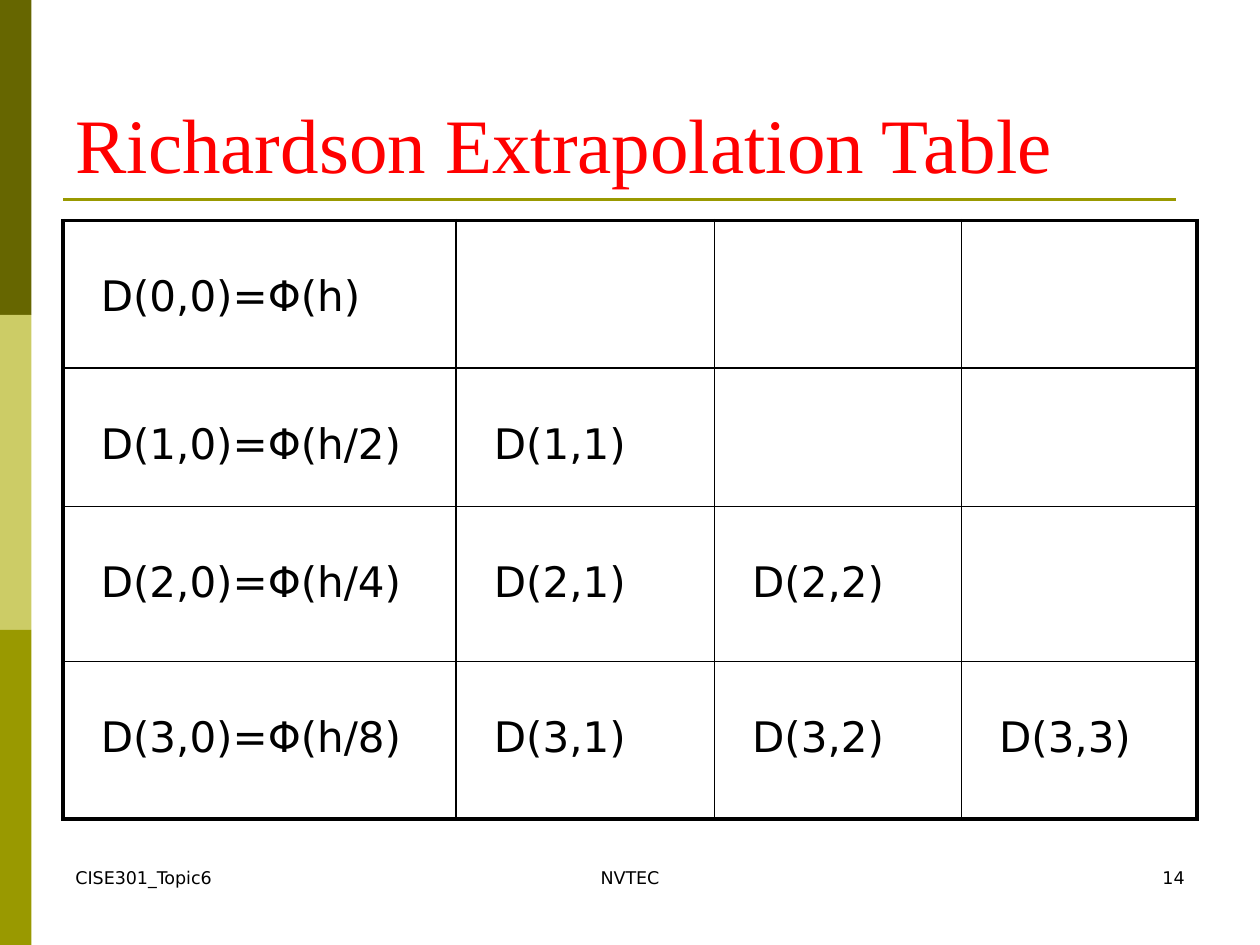
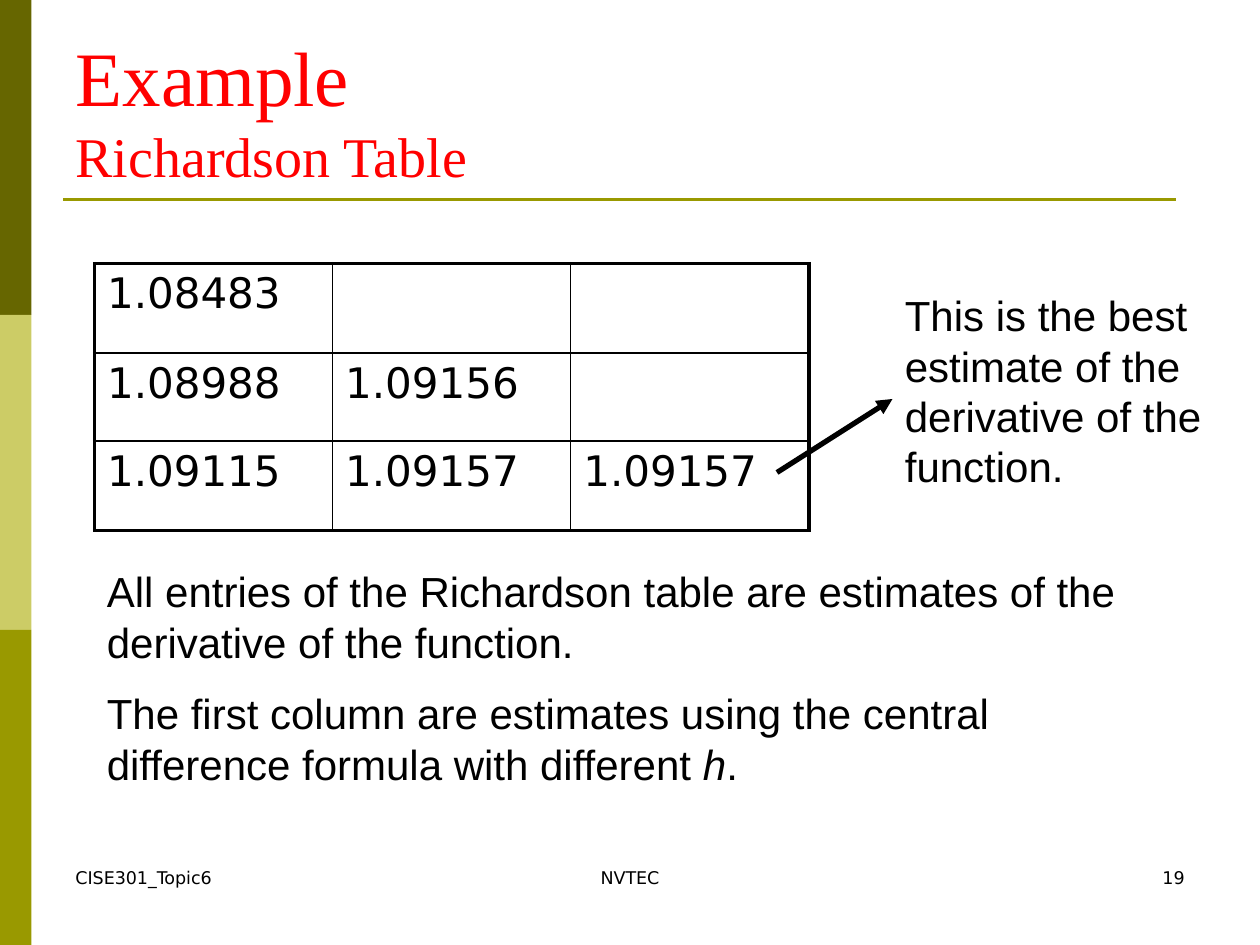
from dataclasses import dataclass

from lxml.etree import SubElement
from pptx import Presentation
from pptx.dml.color import RGBColor
from pptx.enum.shapes import MSO_CONNECTOR as Connector, MSO_SHAPE as Shape
from pptx.enum.text import MSO_ANCHOR as Anchor, MSO_AUTO_SIZE as AutoSize, PP_ALIGN as Align
from pptx.oxml.ns import qn
from pptx.util import Inches, Pt

COLUMNS, ROWS = 120, 90
UNIT = Inches(10) / COLUMNS


@dataclass(frozen=True)
class Theme:
    """Colours, fonts and point sizes shared by the slides."""
    ink: str = "000000"
    title: str = "FF0000"
    rule: str = "999900"
    bands: tuple = ("666600", "CCCC66", "999900")
    serif: str = "Times New Roman"
    sans: str = "DejaVu Sans"
    prose: str = "Arial"
    title_size: int = 44
    subtitle_size: int = 32
    body_size: int = 24
    footer_size: int = 10
    rule_width: float = 1.5
    arrow_width: float = 3
    frame_width: float = 2.25
    grid_width: float = 1


@dataclass(frozen=True)
class Box:
    """A region measured in grid columns and rows."""
    left: float
    top: float
    width: float
    height: float

    def region(self, left, top, width, height):
        """Return a region offset from this one."""
        return Box(self.left + left, self.top + top, width, height)

    def emu(self):
        """Return left, top, width and height as slide lengths."""
        return [round(n * UNIT) for n in (self.left, self.top, self.width, self.height)]


THEME = Theme()
PAGE = Box(0, 0, COLUMNS, ROWS)
BODY = Box(6, 21, 108, 57)
FOOTER = Box(6, 82, 108, 6)
PLAIN_CELL = {}
PADDED_CELL = {"margin_left": Inches(0.3), "margin_top": Inches(0.3),
               "margin_right": Inches(0.1), "margin_bottom": Inches(0.05)}


def assign(target, values):
    """Set every named attribute of the target."""
    for name, value in values.items():
        setattr(target, name, value)


def write(paragraph, text, face, size, color=THEME.ink, **style):
    """Append a formatted run to the paragraph."""
    run = paragraph.add_run()
    run.text = text
    assign(run.font, {"name": face, "size": Pt(size), **style})
    run.font.color.rgb = RGBColor.from_string(color)


def add_line(slide, start, end, color, width):
    """Draw a straight line between two grid points."""
    points = [round(n * UNIT) for n in (*start, *end)]
    line = slide.shapes.add_connector(Connector.STRAIGHT, *points)
    line.line.color.rgb = RGBColor.from_string(color)
    line.line.width = Pt(width)
    SubElement(line._element.spPr, qn("a:effectLst"))
    return line


def add_bands(slide, box):
    """Stack the colour bands down the left edge and draw the title rule."""
    height = box.height / len(THEME.bands)
    for index, color in enumerate(THEME.bands):
        place = box.region(0, index * height, 3, height)
        band = slide.shapes.add_shape(Shape.RECTANGLE, *place.emu())
        band.shadow.inherit = False
        band.fill.solid()
        band.fill.fore_color.rgb = RGBColor.from_string(color)
        band.line.fill.background()
    add_line(slide, (6, 19), (112, 19), THEME.rule, THEME.rule_width)


def add_prose(slide, box, paragraphs, face, size, align=Align.LEFT):
    """Place wrapped paragraphs, each a list of (text, style) pairs."""
    frame = slide.shapes.add_textbox(*box.emu()).text_frame
    frame.word_wrap = True
    for index, pieces in enumerate(paragraphs):
        paragraph = frame.add_paragraph() if index else frame.paragraphs[0]
        paragraph.alignment = align
        if index:
            paragraph.space_before = Pt(size / 2)
        for text, style in pieces:
            write(paragraph, text, face, size, **style)


def add_footer(slide, box, number):
    """Place the course, school and slide number along the bottom."""
    entries = (("CISE301_Topic6", 0, 28, Align.LEFT),
               ("NVTEC", 35, 38, Align.CENTER),
               (str(number), 80, 28, Align.RIGHT))
    for text, left, width, align in entries:
        add_prose(slide, box.region(left, 0, width, box.height), [[(text, {})]],
                  THEME.sans, THEME.footer_size, align)


def set_title(slide, box, heading, subtitle=None):
    """Move the title placeholder and fill in its one or two lines."""
    title = slide.shapes.title
    assign(title, dict(zip(("left", "top", "width", "height"), box.emu())))
    assign(title.text_frame, {"vertical_anchor": Anchor.BOTTOM, "word_wrap": True,
                              "auto_size": AutoSize.NONE})
    paragraph = title.text_frame.paragraphs[0]
    paragraph.alignment = Align.LEFT
    write(paragraph, heading, THEME.serif, THEME.title_size, THEME.title)
    if subtitle:
        paragraph.add_line_break()
        write(paragraph, subtitle, THEME.serif, THEME.subtitle_size, THEME.title)


def add_borders(cell, outer):
    """Draw heavy outer and thin inner edges around a cell."""
    properties = cell._tc.get_or_add_tcPr()
    for side in "LRTB":
        width = THEME.frame_width if outer[side] else THEME.grid_width
        edge = SubElement(properties, qn(f"a:ln{side}"), w=str(Pt(width)))
        fill = SubElement(edge, qn("a:solidFill"))
        SubElement(fill, qn("a:srgbClr"), val=THEME.ink)


def add_triangle(slide, box, entries, widths, heights, margins, spacing):
    """Build a square table whose entries fill its lower triangle."""
    count = len(entries)
    table = slide.shapes.add_table(count, count, *box.emu()).table
    assign(table, {"first_row": False, "horz_banding": False})
    for column, width in zip(table.columns, widths):
        column.width = Inches(width)
    for row, height in zip(table.rows, heights):
        row.height = Inches(height)
    last = count - 1
    for r in range(count):
        for c in range(count):
            cell = table.cell(r, c)
            add_borders(cell, {"L": c == 0, "R": c == last, "T": r == 0, "B": r == last})
            cell.fill.background()
            if c <= r:
                assign(cell, margins)
                paragraph = cell.text_frame.paragraphs[0]
                paragraph.line_spacing = spacing
                write(paragraph, entries[r][c], THEME.sans, THEME.body_size)


def start_slide(deck, number, heading, subtitle=None):
    """Add a title-only slide with the shared bands, footer and title."""
    slide = deck.slides.add_slide(deck.slide_layouts[5])
    add_bands(slide, PAGE)
    add_footer(slide, FOOTER, number)
    set_title(slide, PAGE.region(6, 3.6, 108, 15), heading, subtitle)
    return slide


def build_formula_slide(deck, box):
    """Show the general layout of the extrapolation table."""
    slide = start_slide(deck, 14, "Richardson Extrapolation Table")
    steps = ("h", "h/2", "h/4", "h/8")
    entries = [[f"D({n},0)=Φ({step})"] + [f"D({n},{m})" for m in range(1, n + 1)]
               for n, step in enumerate(steps)]
    add_triangle(slide, box, entries, (3.12, 2.05, 1.96, 1.87),
                 (1.17, 1.1, 1.23, 1.25), PADDED_CELL, 1.3)


def build_example_slide(deck, box):
    """Show the worked table with its best estimate and remarks."""
    slide = start_slide(deck, 19, "Example", "Richardson Table")
    estimates = (("1.08483",), ("1.08988", "1.09156"), ("1.09115", "1.09157", "1.09157"))
    add_triangle(slide, box.region(3, 4.1, 68, 25.4), estimates, (1.89,) * 3,
                 (0.71, 0.7, 0.71), PLAIN_CELL, 1.0)
    arrow = add_line(slide, (85, 38), (74, 45), THEME.ink, THEME.arrow_width)
    SubElement(arrow._element.spPr.find(qn("a:ln")), qn("a:headEnd"), type="triangle")
    best = [[("This is the best estimate of the derivative of the function.", {})]]
    add_prose(slide, box.region(79, 6, 31, 20.4), best, THEME.prose, THEME.body_size)
    remarks = [
        [("All entries of the Richardson table are estimates of the derivative "
          "of the function.", {})],
        [("The first column are estimates using the central difference formula "
          "with different ", {}), ("h", {"italic": True}), (".", {})],
    ]
    add_prose(slide, box.region(3, 32.3, 103, 23), remarks, THEME.prose, THEME.body_size)


def main():
    """Build and save the two slides."""
    deck = Presentation()
    assign(deck, {"slide_width": round(COLUMNS * UNIT), "slide_height": round(ROWS * UNIT)})
    build_formula_slide(deck, BODY)
    build_example_slide(deck, BODY)
    deck.save("out.pptx")


if __name__ == "__main__":
    main()
